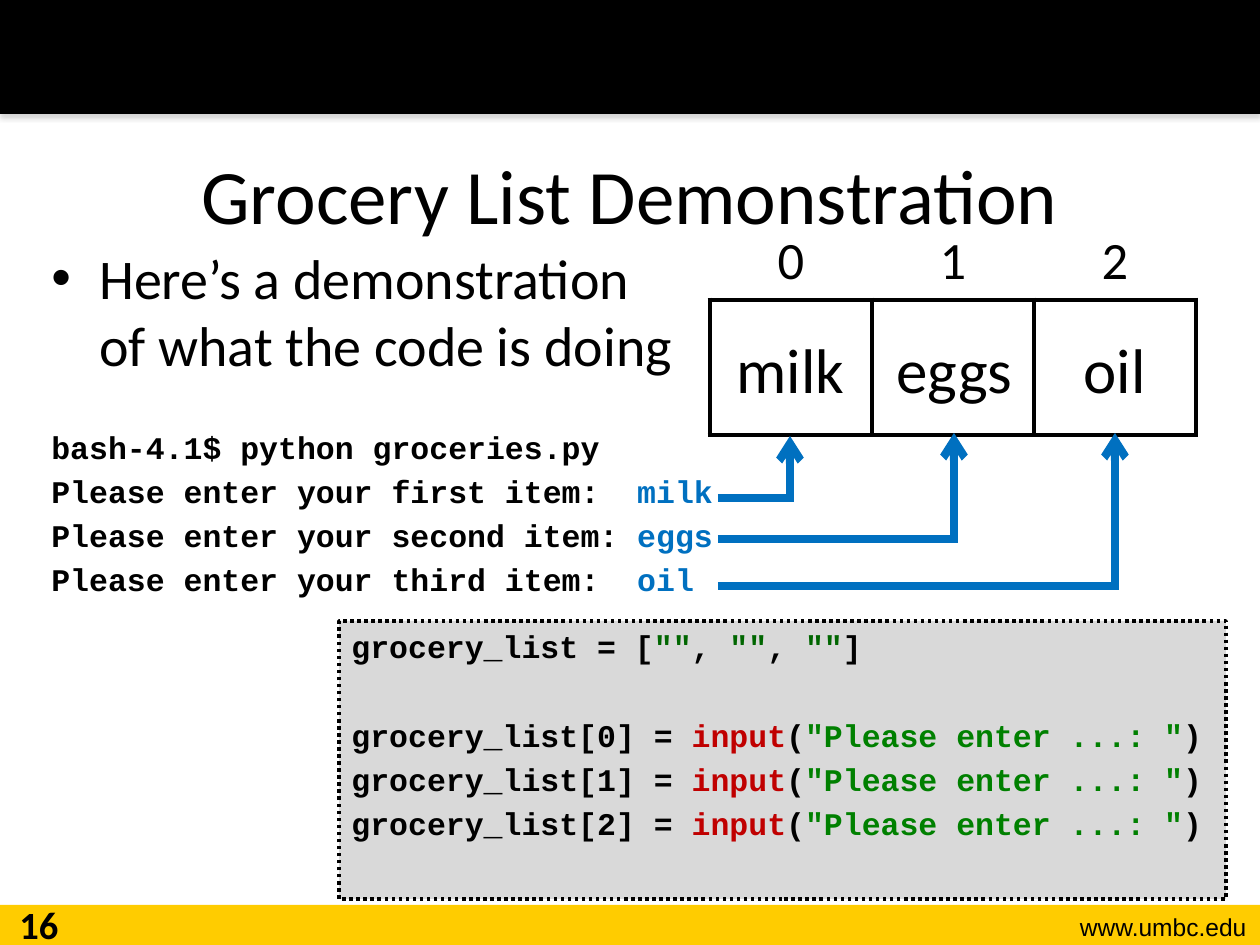
from dataclasses import dataclass
from typing import NamedTuple

from lxml import etree
from pptx import Presentation, util as u
from pptx.dml.color import RGBColor
from pptx.enum import dml, shapes, text
from pptx.oxml import ns, parse_xml

PX = u.Inches(1) / 126
BLACK = RGBColor(0x00, 0x00, 0x00)
WHITE = RGBColor(0xFF, 0xFF, 0xFF)
GOLD = RGBColor(0xFF, 0xCC, 0x00)
GREY = RGBColor(0xD9, 0xD9, 0xD9)
BLUE = RGBColor(0x00, 0x70, 0xC0)
RED = RGBColor(0xC0, 0x00, 0x00)
GREEN = RGBColor(0x00, 0x80, 0x00)
DARK_GREEN = RGBColor(0x00, 0x66, 0x00)
CODE = {"name": "Courier New", "size": u.Pt(18), "bold": True}
LINE_GAP, BLOCK_GAP = 3.5, 29
NO_STYLE_NO_GRID = "{2D5ABB26-0587-4C30-8999-92F81FD0307C}"
LEFT, CENTER, RIGHT = text.PP_ALIGN.LEFT, text.PP_ALIGN.CENTER, text.PP_ALIGN.RIGHT


class Box(NamedTuple):
    left: int
    top: int
    width: int
    height: int


class Part(NamedTuple):
    wording: str
    color: RGBColor = BLACK


@dataclass
class Label:
    wording: str
    box: Box
    font: dict
    align: text.PP_ALIGN = CENTER


@dataclass
class Elbow:
    """A line from an answer, turning up to its list cell."""
    x: int
    y: int
    tip: int


def px(length: int) -> u.Emu:
    return u.Emu(round(length * PX))


def place(box: Box) -> list:
    return [px(length) for length in box]


def sans(size: int, bold: bool = False) -> dict:
    return {"name": "Calibri", "size": u.Pt(size), "bold": bold}


def write(paragraph, parts: list, font: dict, align=LEFT, before: float = 0) -> None:
    paragraph.alignment = align
    paragraph.space_before = u.Pt(before)
    for part in parts:
        run = paragraph.add_run()
        run.text = part.wording
        for name, value in font.items():
            setattr(run.font, name, value)
        run.font.color.rgb = part.color


def write_lines(frame, lines: list, gaps: list) -> None:
    for index, (parts, gap) in enumerate(zip(lines, gaps)):
        paragraph = frame.add_paragraph() if index or frame.text else frame.paragraphs[0]
        if any("\t" in part.wording for part in parts):
            tabs = etree.SubElement(paragraph._p.get_or_add_pPr(), ns.qn("a:tabLst"))
            etree.SubElement(tabs, ns.qn("a:tab"), pos=str(u.Inches(4.65)), algn="l")
        write(paragraph, parts, CODE, before=gap)


def add_box(slide, box: Box, fill: RGBColor):
    shape = slide.shapes.add_shape(shapes.MSO_SHAPE.RECTANGLE, *place(box))
    shape.shadow.inherit = False
    shape.fill.solid()
    shape.fill.fore_color.rgb = fill
    shape.line.fill.background()
    return shape


def add_text(slide, box: Box):
    frame = slide.shapes.add_textbox(*place(box)).text_frame
    frame.word_wrap = True
    return frame


def add_label(slide, label: Label) -> None:
    frame = add_text(slide, label.box)
    write(frame.paragraphs[0], [Part(label.wording)], label.font, label.align)


def add_line(slide, start: tuple, end: tuple, arrow: bool = False) -> None:
    ends = [px(length) for length in (*start, *end)]
    line = slide.shapes.add_connector(shapes.MSO_CONNECTOR.STRAIGHT, *ends)
    line.line.color.rgb = BLUE
    line.line.width = u.Pt(4.5)
    if arrow:
        etree.SubElement(line.line._get_or_add_ln(), ns.qn("a:tailEnd"), type="arrow")
    etree.SubElement(line._element.spPr, ns.qn("a:effectLst"))


def add_elbow(slide, elbow: Elbow) -> None:
    add_line(slide, (elbow.x, elbow.y), (elbow.x, elbow.tip), arrow=True)
    add_line(slide, (718, elbow.y), (elbow.x + 4, elbow.y))


def set_borders(cell, sides: str) -> None:
    properties = cell._tc.get_or_add_tcPr()
    for index, side in enumerate(sides.split()):
        properties.insert(index, parse_xml(
            f'<a:ln{side} {ns.nsdecls("a")} w="{u.Pt(3)}"><a:solidFill>'
            f'<a:srgbClr val="{BLACK}"/></a:solidFill></a:ln{side}>'))


def add_list_table(slide) -> None:
    table = slide.shapes.add_table(2, 3, *place(Box(710, 205, 486, 230))).table
    table.first_row = table.horz_banding = False
    table._tbl.tblPr.find(ns.qn("a:tableStyleId")).text = NO_STYLE_NO_GRID
    for row, height in zip(table.rows, (95, 135)):
        row.height = px(height)
    for index, column in enumerate(table.columns):
        column.width = px(162)
        heading, slot = table.cell(0, index), table.cell(1, index)
        heading.vertical_anchor = text.MSO_ANCHOR.BOTTOM
        heading.fill.background()
        write(heading.text_frame.paragraphs[0], [Part(str(index))], sans(30), CENTER)
        set_borders(heading, "B")
        slot.fill.solid()
        slot.fill.fore_color.rgb = WHITE
        set_borders(slot, "L R T B")


def add_body(slide) -> None:
    frame = add_text(slide, Box(39, 237, 1207, 573))
    bullet = frame.paragraphs[0]
    properties = bullet._p.get_or_add_pPr()
    properties.set("marL", str(u.Inches(0.38)))
    properties.set("indent", str(u.Inches(-0.38)))
    etree.SubElement(properties, ns.qn("a:buFont"), typeface="Arial")
    etree.SubElement(properties, ns.qn("a:buChar"), char="•")
    write(bullet, [Part("Here’s a demonstration")], sans(32))
    bullet.add_line_break()
    write(bullet, [Part("of what the code is doing")], sans(32))
    answers = {"first": "milk", "second": "eggs", "third": "oil"}
    session = [[Part("bash-4.1$ python groceries.py")]]
    session += [[Part(f"Please enter your {order} item:\t"), Part(answer, BLUE)]
                for order, answer in answers.items()]
    write_lines(frame, session, [BLOCK_GAP] + [LINE_GAP] * 3)


def add_code(slide) -> None:
    shape = add_box(slide, Box(339, 621, 887, 278), GREY)
    shape.line.color.rgb = BLACK
    shape.line.width = u.Pt(2)
    shape.line.dash_style = dml.MSO_LINE.ROUND_DOT
    frame = shape.text_frame
    frame.word_wrap = True
    frame.vertical_anchor = text.MSO_ANCHOR.TOP
    empty = Part('""', DARK_GREEN)
    code = [[Part("grocery_list = ["), empty, Part(", "), empty, Part(", "), empty, Part("]")]]
    code += [[Part(f"grocery_list[{index}] = "), Part("input", RED), Part("("),
              Part('"Please enter ...: "', GREEN), Part(")")] for index in range(3)]
    write_lines(frame, code, [0, BLOCK_GAP, LINE_GAP, LINE_GAP])


def main() -> None:
    presentation = Presentation()
    presentation.slide_width, presentation.slide_height = px(1260), px(945)
    slide = presentation.slides.add_slide(presentation.slide_layouts[5])

    # Footer and header bars
    add_box(slide, Box(0, 905, 1260, 40), GOLD)
    header = add_box(slide, Box(0, 0, 1260, 114), BLACK)
    header._element.spPr.find(ns.qn("a:effectLst")).append(parse_xml(
        f'<a:outerShdw {ns.nsdecls("a")} blurRad="{u.Pt(3.1)}" dist="{u.Pt(1.8)}" dir="5400000">'
        '<a:srgbClr val="808080"><a:alpha val="35000"/></a:srgbClr></a:outerShdw>'))

    # Title
    title = slide.shapes.title
    title.left, title.top, title.width, title.height = place(Box(63, 115, 1134, 158))
    title.text_frame.vertical_anchor = text.MSO_ANCHOR.MIDDLE
    write(title.text_frame.paragraphs[0], [Part("Grocery List Demonstration")], sans(44), CENTER)

    # Bullet, session, list and code
    add_body(slide)
    add_list_table(slide)
    for elbow in (Elbow(790, 498, 436), Elbow(954, 539, 433), Elbow(1115, 586, 433)):
        add_elbow(slide, elbow)
    add_code(slide)

    # List items and footer texts
    for label in (
        Label("milk", Box(711, 324, 159, 89), sans(36)),
        Label("eggs", Box(875, 324, 159, 89), sans(36)),
        Label("oil", Box(1051, 324, 127, 89), sans(36)),
        Label("16", Box(0, 895, 78, 50), sans(22, bold=True)),
        Label("www.umbc.edu", Box(1008, 906, 251, 42), {"name": "Arial", "size": u.Pt(14)}, RIGHT),
    ):
        add_label(slide, label)

    presentation.save("out.pptx")


if __name__ == "__main__":
    main()
